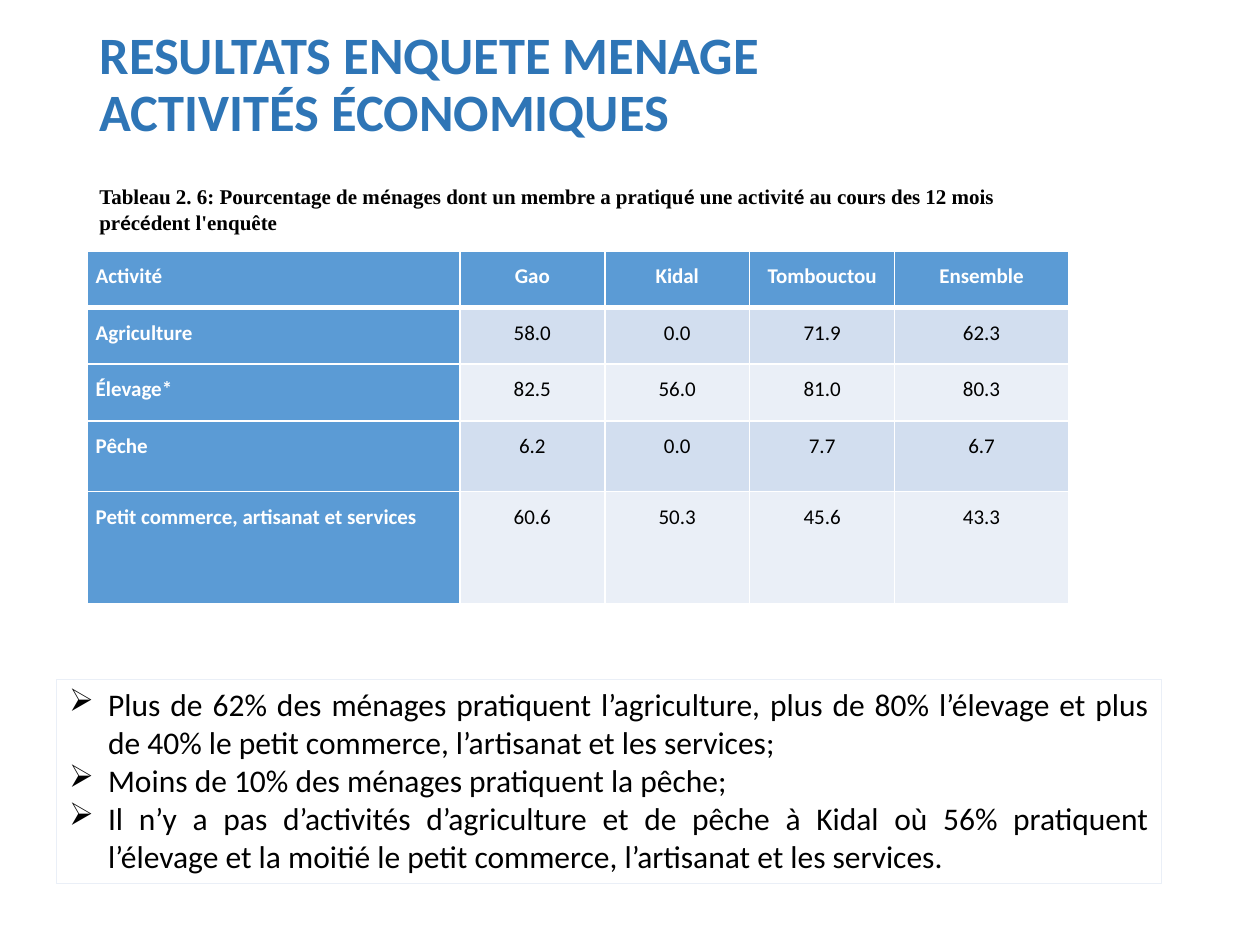
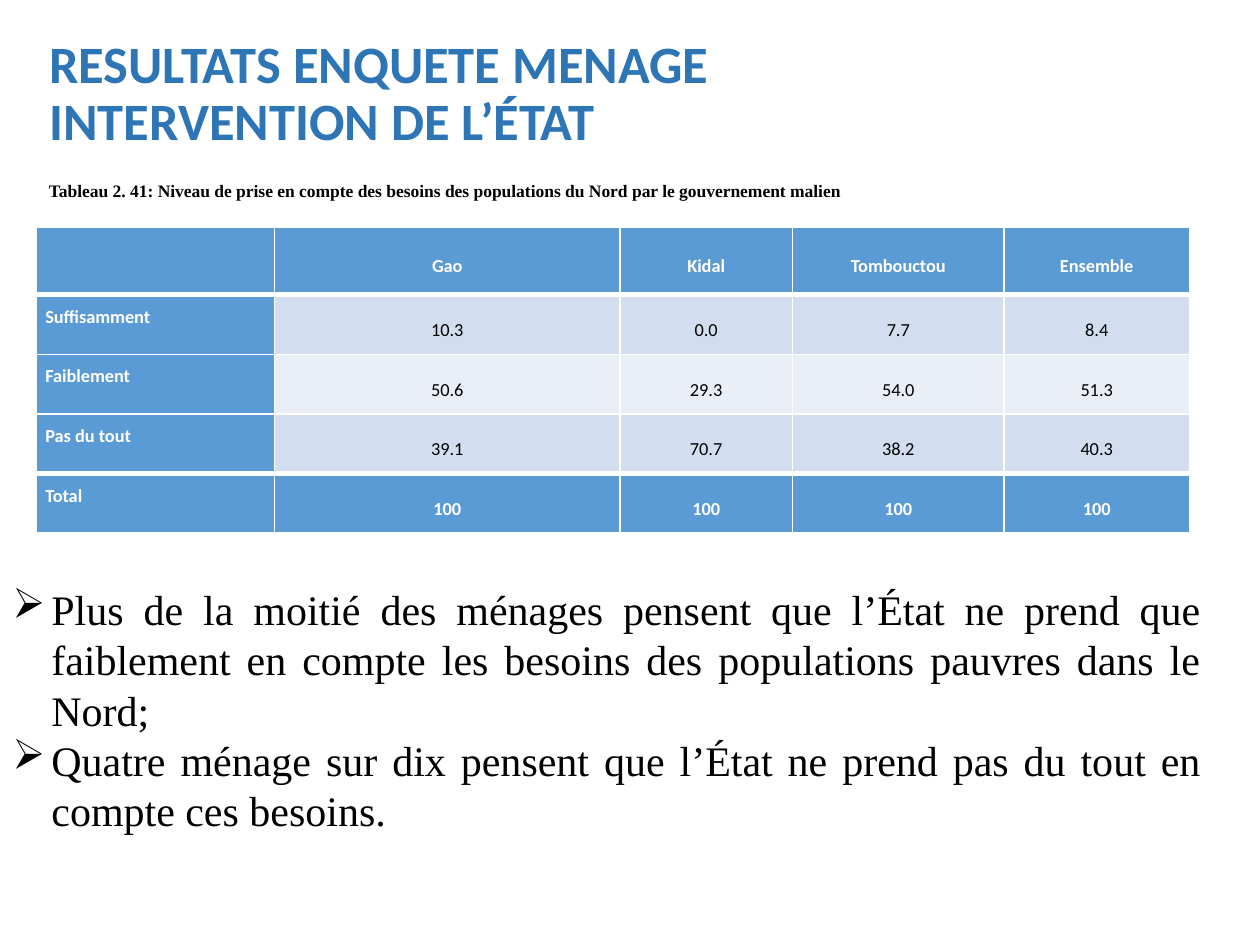
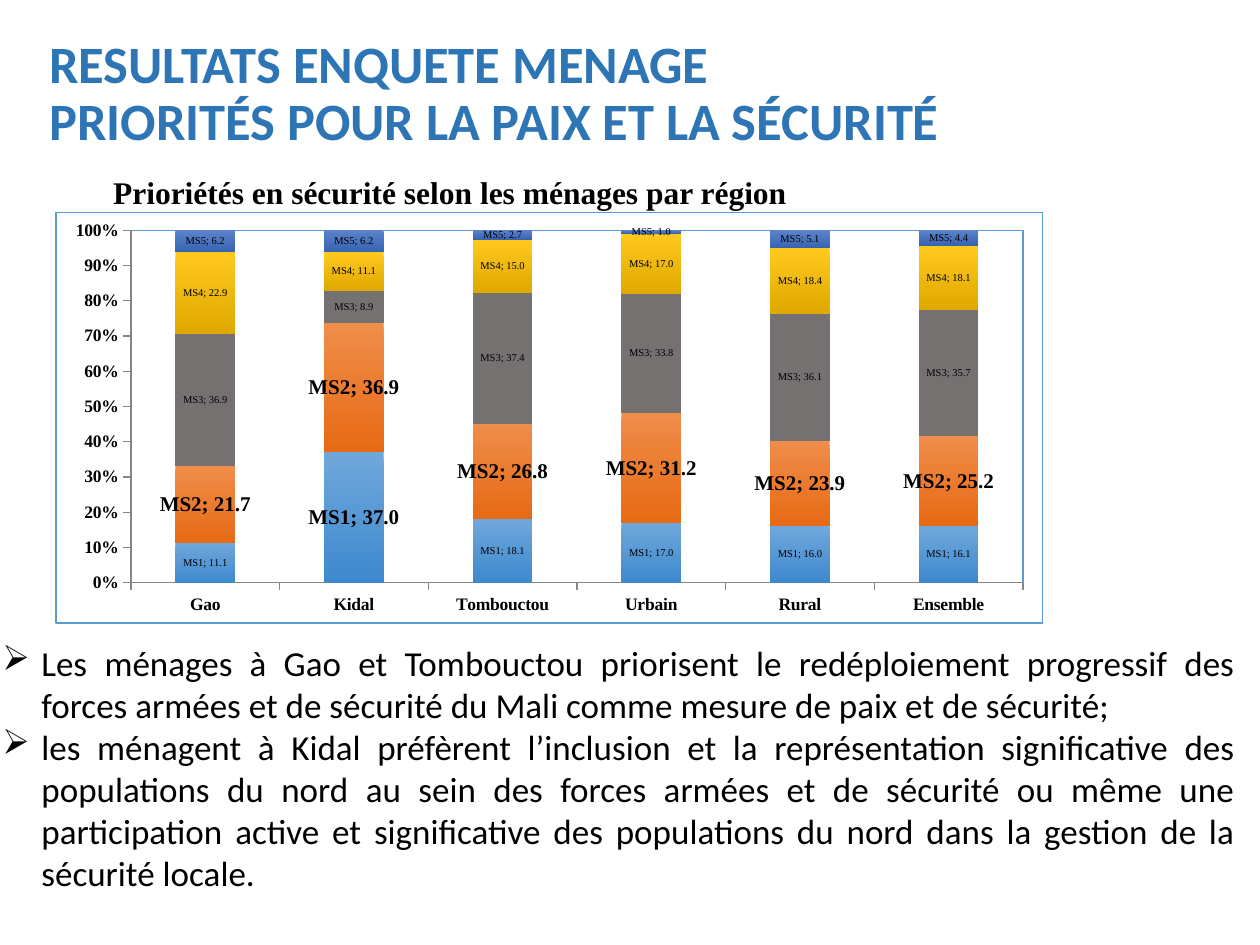
from dataclasses import dataclass
from itertools import groupby

from lxml.etree import SubElement
from pptx import Presentation
from pptx.chart.data import CategoryChartData
from pptx.dml.color import RGBColor
from pptx.enum.chart import XL_CHART_TYPE, XL_TICK_MARK
from pptx.enum.shapes import MSO_SHAPE
from pptx.enum.text import MSO_ANCHOR, MSO_AUTO_SIZE, PP_ALIGN
from pptx.oxml import parse_xml
from pptx.oxml.ns import nsdecls, qn
from pptx.util import Emu, Inches, Pt


@dataclass(frozen=True)
class Theme:
    """Colours, fonts and type sizes shared by the slides."""
    title: str = "2E75B6"
    accent: str = "5B9BD5"
    band_dark: str = "D2DEEF"
    band_light: str = "EAEFF7"
    axis: str = "868686"
    ink: str = "000000"
    paper: str = "FFFFFF"
    sans: str = "Calibri"
    serif: str = "Times New Roman"
    title_size: float = 30
    axis_size: float = 10
    label_size: float = 6
    strong_label_size: float = 12
    series: tuple = ("5B9BD5", "ED7D31", "767171", "FFC000", "4472C4")


THEME = Theme()
COLUMNS, ROWS = 100, 75
CELL = Inches(0.1)
REGIONS = ("Gao", "Kidal", "Tombouctou", "Ensemble")


@dataclass(frozen=True)
class Box:
    """A rectangle measured in cells of the slide grid."""
    left: float
    top: float
    width: float
    height: float

    def inner(self, left, top, width, height):
        """Return a box placed relative to this one."""
        return Box(self.left + left, self.top + top, width, height)

    def emu(self):
        """Return left, top, width and height as lengths."""
        return [Emu(round(n * CELL)) for n in (self.left, self.top, self.width, self.height)]


def style_font(font, size, color=THEME.ink, name=THEME.sans, bold=False):
    """Format a font in one step."""
    font.size, font.name, font.bold = Pt(size), name, bold
    font.color.rgb = RGBColor.from_string(color)


def add_title(slide, box, topic):
    """Place the title placeholder with the survey name above the topic."""
    title = slide.shapes.title
    title.left, title.top, title.width, title.height = box.emu()
    frame = title.text_frame
    frame.auto_size, frame.vertical_anchor = MSO_AUTO_SIZE.NONE, MSO_ANCHOR.MIDDLE
    heading = frame.paragraphs[0]
    heading.alignment, heading.line_spacing = PP_ALIGN.LEFT, 0.9
    heading.add_run().text = "RESULTATS ENQUETE MENAGE"
    heading.add_line_break()
    heading.add_run().text = topic
    style_font(heading.font, THEME.title_size, THEME.title, bold=True)


def add_caption(slide, box, text, size, accent_font=THEME.serif, anchor=MSO_ANCHOR.MIDDLE):
    """Add a bold caption and return its paragraph."""
    frame = slide.shapes.add_textbox(*box.emu()).text_frame
    frame.word_wrap, frame.vertical_anchor = True, anchor
    caption = frame.paragraphs[0]
    style_font(caption.font, size, name=THEME.serif, bold=True)
    if accent_font == THEME.serif:
        caption.add_run().text = text
        return caption
    for accented, letters in groupby(text, lambda letter: letter == "é"):
        run = caption.add_run()
        run.text = "".join(letters)
        run.font.name = accent_font if accented else THEME.serif
    return caption


def add_findings(slide, box, findings, size, font=THEME.sans, outlined=False):
    """Add justified findings with arrow bullets, in a frame if outlined."""
    if outlined:
        panel = slide.shapes.add_shape(MSO_SHAPE.RECTANGLE, *box.emu())
        panel.shadow.inherit = False
        panel.fill.background()
        panel.line.color.rgb = RGBColor.from_string(THEME.band_light)
        panel.line.width = Pt(0.75)
    else:
        panel = slide.shapes.add_textbox(*box.emu())
    frame = panel.text_frame
    frame.word_wrap, frame.vertical_anchor = True, MSO_ANCHOR.TOP
    for index, text in enumerate(findings):
        finding = frame.add_paragraph() if index else frame.paragraphs[0]
        finding.add_run().text = text
        finding.alignment = PP_ALIGN.JUSTIFY
        properties = finding._p.get_or_add_pPr()
        properties.set("marL", str(Inches(0.31)))
        properties.set("indent", str(-Inches(0.31)))
        SubElement(properties, qn("a:buChar")).set("char", "➢")
        style_font(finding.font, size, name=font)


def set_borders(cell, top=1, bottom=1):
    """Draw white rules around a cell."""
    for side, width in (("L", 1), ("R", 1), ("T", top), ("B", bottom)):
        cell._tc.get_or_add_tcPr().append(parse_xml(
            f'<a:ln{side} {nsdecls("a")} w="{Pt(width)}"><a:solidFill>'
            f'<a:srgbClr val="{THEME.paper}"/></a:solidFill></a:ln{side}>'))


def add_results(slide, box, rows, widths, heights, size, anchor, header_space=0, total=False):
    """Add a banded table with a strong header, first column and optional total."""
    table = slide.shapes.add_table(len(rows), len(widths), *box.emu()).table
    table.last_row, table.first_col = total, True
    for column, width in zip(table.columns, widths):
        column.width = Emu(round(width * CELL))
    for row, height in zip(table.rows, heights):
        row.height = Emu(round(height * CELL))
    for r, values in enumerate(rows):
        closing = total and r == len(rows) - 1
        for c, value in enumerate(values):
            cell = table.cell(r, c)
            strong = r == 0 or c == 0 or closing
            set_borders(cell, 3 if closing else 1, 3 if r == 0 else 1)
            cell.fill.solid()
            band = THEME.band_dark if r % 2 else THEME.band_light
            cell.fill.fore_color.rgb = RGBColor.from_string(THEME.accent if strong else band)
            cell.margin_left = cell.margin_right = Inches(0.07)
            cell.margin_top = cell.margin_bottom = 0
            cell.vertical_anchor = anchor if c else MSO_ANCHOR.TOP
            entry = cell.text_frame.paragraphs[0]
            if value:
                entry.add_run().text = value
            entry.line_spacing = 1.5
            entry.alignment = PP_ALIGN.CENTER if c else PP_ALIGN.LEFT
            if r == 0 and header_space:
                entry.space_before = Pt(header_space)
            style_font(entry.font, size, THEME.paper if strong else THEME.ink, bold=strong)


def frame_properties():
    """Return chart properties for an unfilled area with a thin blue border."""
    return parse_xml(
        f'<c:spPr {nsdecls("c", "a")}><a:noFill/><a:ln w="{Pt(0.75)}"><a:solidFill>'
        f'<a:srgbClr val="{THEME.accent}"/></a:solidFill></a:ln></c:spPr>')


def style_series(series, color, strong):
    """Fill a series and show its name and values as labels."""
    fill = series.format.fill
    if series.name == "MS3":
        fill.solid()
        fill.fore_color.rgb = RGBColor.from_string(color)
    else:
        fill.gradient()
        fill.gradient_angle = 270
        for stop, brightness in zip(fill.gradient_stops, (0.12, -0.12)):
            stop.color.rgb = RGBColor.from_string(color)
            stop.color.brightness = brightness
    labels = series.data_labels
    labels.show_value = labels.show_series_name = True
    labels.number_format, labels.number_format_is_linked = "0.0", False
    size = THEME.strong_label_size if strong else THEME.label_size
    style_font(labels.font, size, name=THEME.serif, bold=strong)
    if series.name == "MS1":
        kidal = series.points[REGIONS.index("Kidal")].data_label
        style_font(kidal.font, THEME.strong_label_size, name=THEME.serif, bold=True)
    for name_switch in series._element.iter(qn("c:showSerName")):
        name_switch.set("val", "1")
    for bubble_switch in series._element.iter(qn("c:showBubbleSize")):
        bubble_switch.addnext(parse_xml(f'<c:separator {nsdecls("c")}>; </c:separator>'))


def add_priorities(slide, box, regions, measures):
    """Add the stacked columns of security measures by region."""
    data = CategoryChartData(number_format="0.0")
    data.categories = regions
    for measure, shares in measures.items():
        data.add_series(measure, shares)
    chart = slide.shapes.add_chart(
        XL_CHART_TYPE.COLUMN_STACKED_100, *box.emu(), data).chart
    chart.has_legend = chart.has_title = False
    style_font(chart.font, THEME.axis_size)
    for axis in (chart.category_axis, chart.value_axis):
        axis.has_major_gridlines = False
        axis.major_tick_mark = XL_TICK_MARK.OUTSIDE
        axis.format.line.color.rgb = RGBColor.from_string(THEME.axis)
        style_font(axis.tick_labels.font, THEME.axis_size, name=THEME.serif, bold=True)
    percent = chart.value_axis.tick_labels
    percent.number_format, percent.number_format_is_linked = "0%", False
    plot = chart.plots[0]
    plot.gap_width, plot.overlap, plot.vary_by_categories = 150, 100, False
    for series, color in zip(plot.series, THEME.series):
        style_series(series, color, series.name == "MS2")
    space = chart._chartSpace
    space.find(qn("c:txPr")).addprevious(frame_properties())
    space.find(f'{qn("c:chart")}/{qn("c:plotArea")}').append(frame_properties())


def build_activities(slide, box):
    """Build the slide on economic activities."""
    add_title(slide, box.inner(6.9, 1.5, 86.2, 10.7), "ACTIVITÉS ÉCONOMIQUES")
    rows = [
        ("Activité", *REGIONS),
        ("Agriculture", "58.0", "0.0", "71.9", "62.3"),
        ("Élevage*", "82.5", "56.0", "81.0", "80.3"),
        ("Pêche", "6.2", "0.0", "7.7", "6.7"),
        ("Petit commerce, artisanat et services", "60.6", "50.3", "45.6", "43.3"),
    ]
    add_results(slide, box.inner(6.9, 19.9, 77.8, 28.2), rows,
                (29.6, 11.5, 11.5, 11.5, 13.8), (4.5, 4.5, 4.5, 5.6, 8.9),
                12, MSO_ANCHOR.TOP, header_space=4)
    add_caption(slide, box.inner(6.9, 14.1, 74.4, 5),
                "Tableau 2. 6: Pourcentage de ménages dont un membre a pratiqué une activité "
                "au cours des 12 mois précédent l'enquête", 12, THEME.sans)
    add_findings(slide, box.inner(4.5, 53.9, 87.7, 16.2), (
        "Plus de 62% des ménages pratiquent l’agriculture, plus de 80% l’élevage et plus "
        "de 40% le petit commerce, l’artisanat et les services;",
        "Moins de 10% des ménages pratiquent la pêche;",
        "Il n’y a pas d’activités d’agriculture et de pêche à Kidal où 56% pratiquent "
        "l’élevage et la moitié le petit commerce, l’artisanat et les services.",
    ), 18, outlined=True)


def build_intervention(slide, box):
    """Build the slide on the intervention of the state."""
    add_title(slide, box.inner(2.9, 2.2, 94.2, 10.7), "INTERVENTION DE L’ÉTAT")
    add_findings(slide, box.inner(0, 45.8, 96.3, 21.2), (
        "Plus de la moitié des ménages pensent que l’État ne prend que faiblement en compte "
        "les besoins des populations pauvres dans le Nord;",
        "Quatre ménage sur dix pensent que l’État ne prend pas du tout en compte ces besoins.",
    ), 24, THEME.serif)
    rows = [
        ("", *REGIONS),
        ("Suffisamment", "10.3", "0.0", "7.7", "8.4"),
        ("Faiblement", "50.6", "29.3", "54.0", "51.3"),
        ("Pas du tout", "39.1", "70.7", "38.2", "40.3"),
        ("Total", *["100"] * len(REGIONS)),
    ]
    add_results(slide, box.inner(2.9, 18, 91.4, 24.3), rows,
                (18.9, 27.4, 13.7, 16.8, 14.7), (5.4, 4.73, 4.73, 4.73, 4.73),
                10.5, MSO_ANCHOR.MIDDLE, total=True)
    add_caption(slide, box.inner(2.9, 13.8, 66.4, 2.7),
                "Tableau 2. 41: Niveau de prise en compte des besoins des populations du Nord "
                "par le gouvernement malien", 10)


def build_priorities(slide, box):
    """Build the slide on priorities for peace and security."""
    add_title(slide, box.inner(2.9, 2.2, 94.2, 10.7), "PRIORITÉS POUR LA PAIX ET LA SÉCURITÉ")
    add_findings(slide, box.inner(-0.8, 50.4, 99.8, 21.2), (
        "Les ménages à Gao et Tombouctou priorisent le redéploiement progressif des forces "
        "armées et de sécurité du Mali comme mesure de paix et de sécurité;",
        "les ménagent à Kidal préfèrent l’inclusion et la représentation significative des "
        "populations du nord au sein des forces armées et de sécurité ou même une "
        "participation active et significative des populations du nord dans la gestion de "
        "la sécurité locale.",
    ), 20)
    caption = add_caption(slide, box.inner(8, 11.7, 71.4, 5.1),
                          "Prioriétés en sécurité selon les ménages par région",
                          18, anchor=MSO_ANCHOR.TOP)
    caption.line_spacing, caption.space_before = 1.5, Pt(12)
    add_priorities(slide, box.inner(4.4, 16.8, 78.4, 32.7),
                   (*REGIONS[:3], "Urbain", "Rural", REGIONS[3]), {
        "MS1": (11.1, 37, 18.1, 17, 16, 16.1),
        "MS2": (21.7, 36.9, 26.8, 31.2, 23.9, 25.2),
        "MS3": (36.9, 8.9, 37.4, 33.8, 36.1, 35.7),
        "MS4": (22.9, 11.1, 15, 17, 18.4, 18.1),
        "MS5": (6.2, 6.2, 2.7, 1, 5.1, 4.4),
    })


def main():
    """Build the presentation and save it."""
    deck = Presentation()
    deck.slide_width, deck.slide_height = COLUMNS * CELL, ROWS * CELL
    for build in (build_activities, build_intervention, build_priorities):
        build(deck.slides.add_slide(deck.slide_layouts[5]), Box(0, 0, COLUMNS, ROWS))
    deck.save("out.pptx")


if __name__ == "__main__":
    main()
